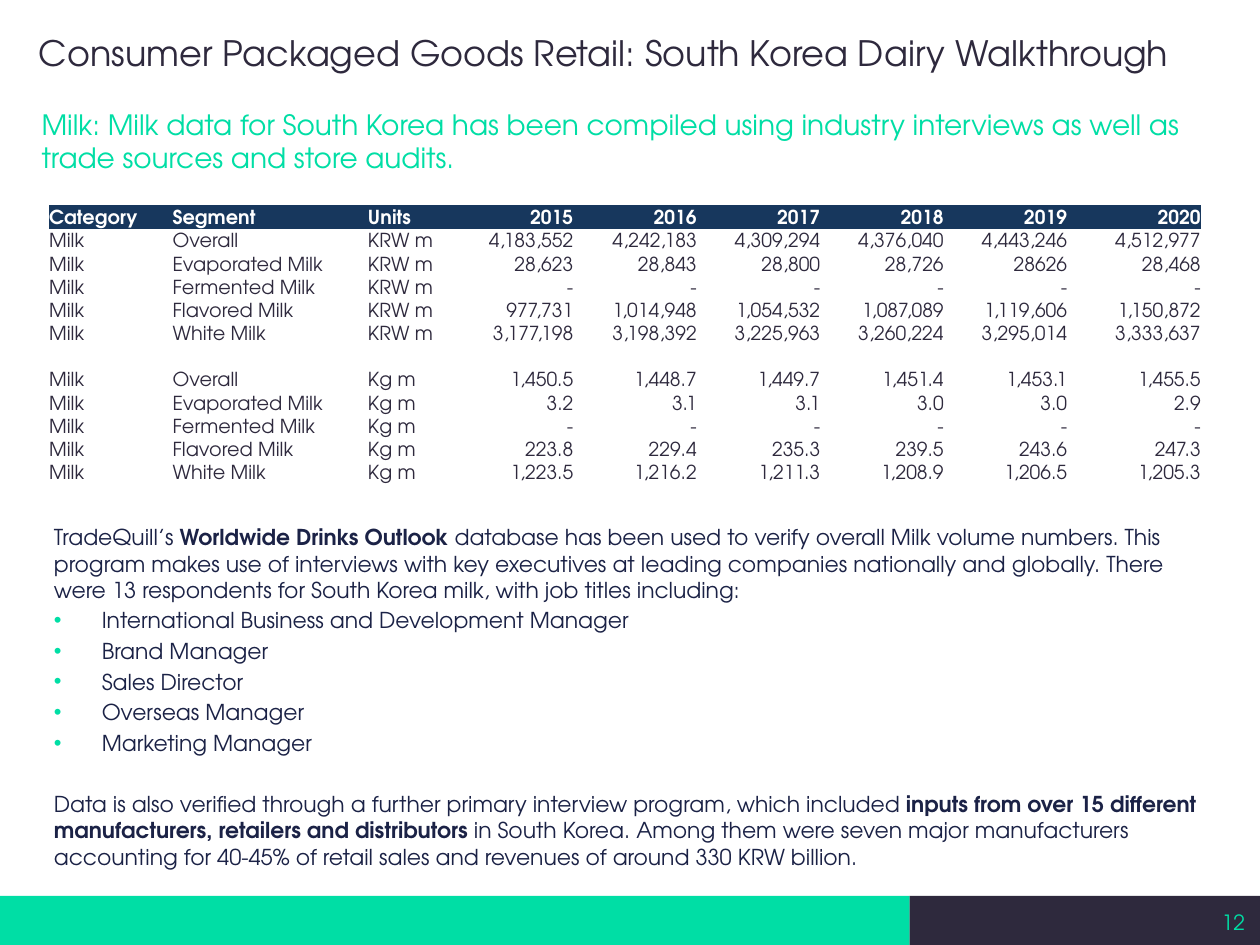
from pptx import Presentation
from pptx.dml.color import RGBColor
from pptx.enum.shapes import MSO_SHAPE
from pptx.enum.text import MSO_ANCHOR, PP_ALIGN
from pptx.oxml import parse_xml
from pptx.oxml.ns import nsdecls, qn
from pptx.util import Inches, Pt

FONT = "TeX Gyre Adventor"
GREEN, DARK, NAVY, BLUE, WHITE = "00DEA5", "2E293D", "1B2246", "17375D", "FFFFFF"


def color(code):
    return RGBColor.from_string(code)


def write(para, text, size, code, bold=False):
    run = para.add_run()
    run.text = text
    font = run.font
    font.name, font.size, font.bold = FONT, Pt(size), bold
    font.color.rgb = color(code)


prs = Presentation()
prs.slide_width, prs.slide_height = Inches(10), Inches(7.5)
slide = prs.slides.add_slide(prs.slide_layouts[6])
shapes = slide.shapes

# Footer bars
for left, width, code in [(0, 7.22, GREEN), (7.22, 2.78, DARK)]:
    bar = shapes.add_shape(MSO_SHAPE.RECTANGLE, Inches(left), Inches(7.11),
                           Inches(width), Inches(0.39))
    bar.shadow.inherit = False
    bar.fill.solid()
    bar.fill.fore_color.rgb = color(code)
    bar.line.fill.background()

# Page number, heading and subheading
labels = [
    ("12", (7.63, 7.12, 2.25, 0.4), 0, MSO_ANCHOR.MIDDLE, PP_ALIGN.RIGHT, 12, GREEN),
    ("Consumer Packaged Goods Retail: South Korea Dairy Walkthrough",
     (0, 0, 10, 0.83), 0.31, MSO_ANCHOR.MIDDLE, PP_ALIGN.LEFT, 20, DARK),
    ("Milk: Milk data for South Korea has been compiled using industry interviews "
     "as well as trade sources and store audits.",
     (0.33, 0.85, 9.35, 0.64), 0, MSO_ANCHOR.TOP, PP_ALIGN.LEFT, 16, GREEN),
]
for text, place, inset, anchor, align, size, code in labels:
    frame = shapes.add_textbox(*map(Inches, place)).text_frame
    frame.word_wrap = True
    frame.vertical_anchor = anchor
    frame.margin_left = Inches(inset)
    frame.margin_right = frame.margin_top = frame.margin_bottom = 0
    para = frame.paragraphs[0]
    para.alignment = align
    write(para, text, size, code)

# Milk table: value rows, then volume rows, with an empty row between
names = ["Overall", "Evaporated Milk", "Fermented Milk", "Flavored Milk", "White Milk"]
values = [
    "4,183,552 4,242,183 4,309,294 4,376,040 4,443,246 4,512,977",
    "28,623 28,843 28,800 28,726 28626 28,468",
    "- - - - - -",
    "977,731 1,014,948 1,054,532 1,087,089 1,119,606 1,150,872",
    "3,177,198 3,198,392 3,225,963 3,260,224 3,295,014 3,333,637",
]
volumes = [
    "1,450.5 1,448.7 1,449.7 1,451.4 1,453.1 1,455.5",
    "3.2 3.1 3.1 3.0 3.0 2.9",
    "- - - - - -",
    "223.8 229.4 235.3 239.5 243.6 247.3",
    "1,223.5 1,216.2 1,211.3 1,208.9 1,206.5 1,205.3",
]
rows = [["Category", "Segment", "Units", *map(str, range(2015, 2021))]]
rows += [["Milk", name, "KRW m", *line.split()] for name, line in zip(names, values)]
rows.append([""] * 9)
rows += [["Milk", name, "Kg m", *line.split()] for name, line in zip(names, volumes)]

table = shapes.add_table(len(rows), 9, Inches(0.39), Inches(1.63),
                         Inches(9.14), Inches(2.2)).table
table.horz_banding = table.first_row = False
plain = "{2D5ABB26-0587-4C30-8999-92F81FD0307C}"  # no style, no grid
table._tbl.tblPr.find(qn("a:tableStyleId")).text = plain
for col, width in zip(table.columns, [0.98, 1.55, 0.73] + [0.98] * 6):
    col.width = Inches(width)
for i, row in enumerate(rows):
    table.rows[i].height = Inches(2.2 / len(rows))
    for j, text in enumerate(row):
        cell = table.cell(i, j)
        cell.margin_left = cell.margin_top = cell.margin_bottom = 0
        cell.margin_right = Inches(0.08 if 3 <= j < 8 else 0)
        cell.vertical_anchor = MSO_ANCHOR.BOTTOM
        if i == 0:
            cell.fill.solid()
            cell.fill.fore_color.rgb = color(BLUE)
        else:
            cell.fill.background()
        para = cell.text_frame.paragraphs[0]
        para.alignment = PP_ALIGN.RIGHT if j > 2 else PP_ALIGN.LEFT
        if text:
            write(para, text, 11, DARK if i else WHITE, i == 0)
        else:
            para.font.size = Pt(11)

# Body text: space before, bullet, runs with their weight
jobs = ["International Business and Development Manager", "Brand Manager",
        "Sales Director", "Overseas Manager", "Marketing Manager"]
body = [(0, False, [
    ("TradeQuill’s ", False),
    ("Worldwide Drinks Outlook ", True),
    ("database has been used to verify overall Milk volume numbers. This program "
     "makes use of interviews with key executives at leading companies nationally "
     "and globally. There were 13 respondents for South Korea milk, with job titles "
     "including:", False)])]
body += [(2.5, True, [(job, False)]) for job in jobs]
body.append((20, False, [
    ("Data is also verified through a further primary interview program, which "
     "included ", False),
    ("inputs from over 15 different manufacturers, retailers and distributors ", True),
    ("in South Korea. Among them were seven major manufacturers accounting for "
     "40-45% of retail sales and revenues of around 330 KRW billion.", False)]))

frame = shapes.add_textbox(Inches(0.33), Inches(4.11), Inches(9.37), Inches(2.94)).text_frame
frame.word_wrap = True
for i, (space, bullet, runs) in enumerate(body):
    para = frame.add_paragraph() if i else frame.paragraphs[0]
    para.space_before = Pt(space)
    if bullet:
        props = para._p.get_or_add_pPr()
        props.set("marL", str(Inches(0.38)))
        props.set("indent", str(-Inches(0.38)))
        ns = nsdecls("a")
        props.append(parse_xml(f'<a:buClr {ns}><a:srgbClr val="{GREEN}"/></a:buClr>'))
        props.append(parse_xml(f'<a:buFont {ns} typeface="Arial"/>'))
        props.append(parse_xml(f'<a:buChar {ns} char="•"/>'))
    for text, bold in runs:
        write(para, text, 12.5, NAVY, bold)

prs.save("out.pptx")
